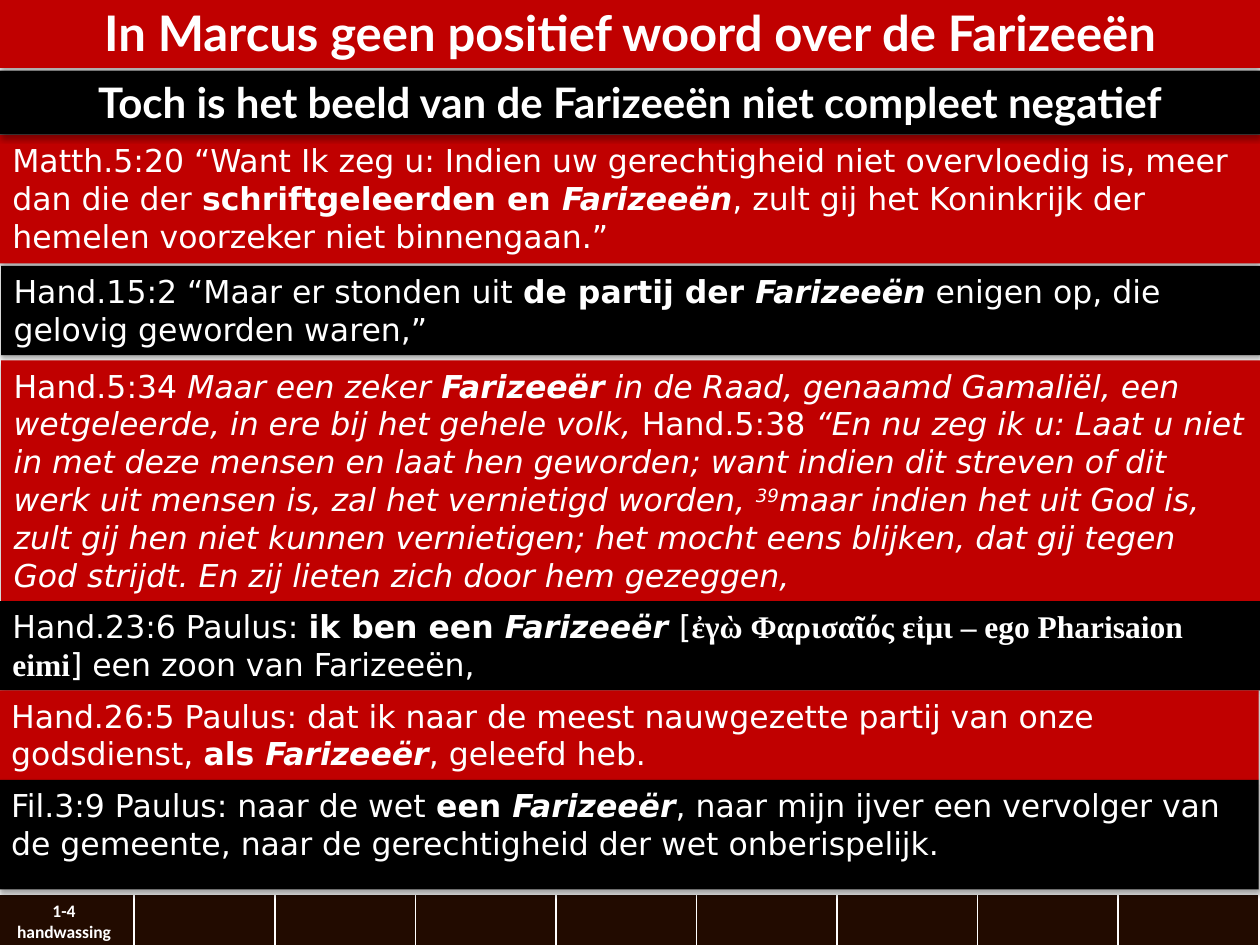
from typing import NamedTuple

from lxml import etree
from pptx import Presentation
from pptx.dml.color import RGBColor
from pptx.enum.shapes import MSO_SHAPE
from pptx.enum.text import MSO_ANCHOR, PP_ALIGN
from pptx.oxml.ns import qn
from pptx.util import Emu, Pt

RECTANGLE = MSO_SHAPE.RECTANGLE
TOP = MSO_ANCHOR.TOP
LEFT, CENTER = PP_ALIGN.LEFT, PP_ALIGN.CENTER

RED = RGBColor(0xC0, 0x00, 0x00)
BLACK = RGBColor(0x00, 0x00, 0x00)
WHITE = RGBColor(0xFF, 0xFF, 0xFF)
BROWN = RGBColor(0x22, 0x0B, 0x00)

EMU_PER_PX = 9144
PAGE_WIDTH, PAGE_HEIGHT = 1000, 750
HEADING_FONT, VERSE_FONT = "Lato", "DejaVu Sans"
GREEK_FONT, TABLE_FONT = "Times New Roman", "Calibri"
TABLE_COLUMNS = 9
TABLE_LEFT, TABLE_TOP, TABLE_WIDTH, TABLE_HEIGHT = -5, 710, 1004, 43
BORDERS = {"a:lnL": 1, "a:lnR": 1, "a:lnT": 1, "a:lnB": 3}


class Span(NamedTuple):
    text: str
    bold: bool = False
    italic: bool = False
    font: str = VERSE_FONT
    raised: bool = False


class Band(NamedTuple):
    left: int
    top: int
    height: int
    fill: RGBColor
    spans: list[Span]
    size: int = 18
    align: PP_ALIGN = LEFT


def heading(text: str) -> list[Span]:
    return [Span(text, bold=True, font=HEADING_FONT)]


def verse(before: str, stress: str, name: str, after: str) -> list[Span]:
    return [Span(before), Span(stress, True), Span(name, True, True), Span(after)]


BANDS = [
    Band(0, -3, 57, RED, heading("In Marcus geen positief woord over de Farizeeën"), 28, CENTER),
    Band(0, 107, 102, RED, verse(
        "Matth.5:20 “Want Ik zeg u: Indien uw gerechtigheid niet overvloedig is, meer dan die der ",
        "schriftgeleerden en ", "Farizeeën",
        ", zult gij het Koninkrijk der hemelen voorzeker niet binnengaan.”")),
    Band(1, 211, 71, BLACK, verse(
        "Hand.15:2 “Maar er stonden uit ", "de partij der ", "Farizeeën",
        " enigen op, die gelovig geworden waren,” ")),
    Band(1, 286, 192, RED, [
        Span("Hand.5:34 "),
        Span("Maar een zeker ", italic=True),
        Span("Farizeeër", True, True),
        Span(" in de Raad, genaamd Gamaliël, een wetgeleerde, in ere bij het gehele volk, ",
             italic=True),
        Span("Hand.5:38 "),
        Span("“En nu zeg ik u: Laat u niet in met deze mensen en laat hen geworden; want indien "
             "dit streven of dit werk uit mensen is, zal het vernietigd worden, ", italic=True),
        Span("39", italic=True, raised=True),
        Span("maar indien het uit God is, zult gij hen niet kunnen vernietigen; het mocht eens "
             "blijken, dat gij tegen God strijdt. En zij lieten zich door hem gezeggen, ",
             italic=True),
    ]),
    Band(0, 477, 71, BLACK, verse("Hand.23:6 Paulus: ", "ik ben een ", "Farizeeër ", "[") + [
        Span("ἐγὼ Φαρισαῖός εἰμι – ego Pharisaion eimi", True, font=GREEK_FONT),
        Span("] een zoon van Farizeeën, "),
    ]),
    Band(-1, 548, 71, RED, verse(
        "Hand.26:5 Paulus: dat ik naar de meest nauwgezette partij van onze godsdienst, ",
        "als ", "Farizeeër", ", geleefd heb. ")),
    Band(-1, 619, 87, BLACK, verse(
        "Fil.3:9 Paulus: naar de wet ", "een ", "Farizeeër",
        ", naar mijn ijver een vervolger van de gemeente, "
        "naar de gerechtigheid der wet onberispelijk.")),
    Band(0, 56, 51, BLACK,
         heading("Toch is het beeld van de Farizeeën niet compleet negatief"), 24, CENTER),
]


def px(length: int) -> Emu:
    return Emu(length * EMU_PER_PX)


def add_span(para, span: Span, size: int) -> None:
    run = para.add_run()
    run.text = span.text
    font = run.font
    font.name, font.size = span.font, Pt(size)
    font.bold, font.italic = span.bold, span.italic
    font.color.rgb = WHITE
    if span.raised:
        run._r.get_or_add_rPr().set("baseline", "30000")


def add_color(parent, color: RGBColor):
    return etree.SubElement(parent, qn("a:srgbClr"), val=str(color))


def add_shadow(shape) -> None:
    shape.shadow.inherit = False
    effects = shape._element.spPr.find(qn("a:effectLst"))
    shadow = etree.SubElement(effects, qn("a:outerShdw"), blurRad="40000",
                              dist="23000", dir="5400000", rotWithShape="0")
    etree.SubElement(add_color(shadow, BLACK), qn("a:alpha"), val="35000")


def add_band(page, band: Band) -> None:
    box = page.shapes.add_shape(RECTANGLE, px(band.left), px(band.top),
                                px(PAGE_WIDTH), px(band.height))
    box.fill.solid()
    box.fill.fore_color.rgb = band.fill
    box.line.fill.background()
    add_shadow(box)
    frame = box.text_frame
    frame.word_wrap = True
    frame.vertical_anchor = TOP
    para = frame.paragraphs[0]
    para.alignment = band.align
    for span in band.spans:
        add_span(para, span, band.size)


def style_cell(cell) -> None:
    properties = cell._tc.get_or_add_tcPr()
    for tag, points in BORDERS.items():
        line = etree.SubElement(properties, qn(tag), w=str(Pt(points)))
        add_color(etree.SubElement(line, qn("a:solidFill")), WHITE)
    cell.fill.solid()
    cell.fill.fore_color.rgb = BROWN


def add_progress_table(page) -> None:
    table = page.shapes.add_table(1, TABLE_COLUMNS, px(TABLE_LEFT), px(TABLE_TOP),
                                  px(TABLE_WIDTH), px(TABLE_HEIGHT)).table
    for column in table.columns:
        column.width = px(TABLE_WIDTH) // TABLE_COLUMNS
    for cell in table.iter_cells():
        style_cell(cell)
    frame = table.cell(0, 0).text_frame
    for para, text in ((frame.paragraphs[0], "1-4"), (frame.add_paragraph(), "handwassing")):
        para.alignment = CENTER
        add_span(para, Span(text, bold=True, font=TABLE_FONT), 10)


def main() -> None:
    deck = Presentation()
    deck.slide_width, deck.slide_height = px(PAGE_WIDTH), px(PAGE_HEIGHT)
    page = deck.slides.add_slide(deck.slide_layouts[6])
    add_progress_table(page)
    for band in BANDS:
        add_band(page, band)
    deck.save("out.pptx")


if __name__ == "__main__":
    main()
